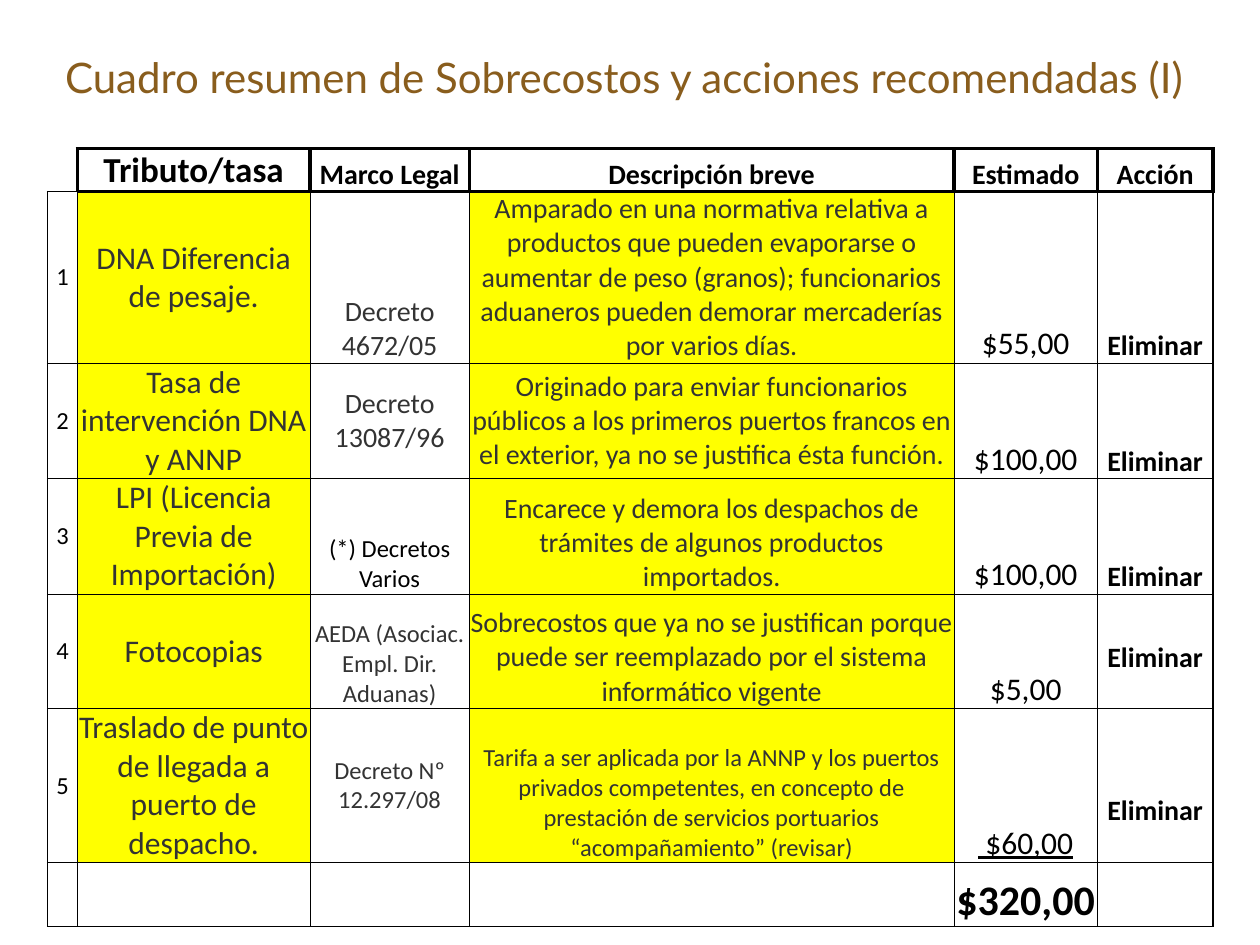
from dataclasses import dataclass

from lxml.etree import SubElement
from pptx import Presentation
from pptx.dml.color import RGBColor as Rgb
from pptx.enum.text import MSO_ANCHOR as Anchor, MSO_AUTO_SIZE as AutoSize, PP_ALIGN as Align
from pptx.oxml.ns import qn
from pptx.util import Pt

TITLE = "Cuadro resumen de Sobrecostos y acciones recomendadas (I)"
HEADERS = ["", "Tributo/tasa", "Marco Legal", "Descripción breve", "Estimado", "Acción"]
TAXES = [
    ("1", "DNA Diferencia de pesaje.", "Decreto 4672/05",
     "Amparado en una normativa relativa a productos que pueden evaporarse o aumentar de peso "
     "(granos); funcionarios aduaneros pueden demorar mercaderías por varios días.",
     "$55,00", "Eliminar"),
    ("2", "Tasa de intervención DNA y ANNP", "Decreto 13087/96",
     "Originado para enviar funcionarios públicos a los primeros puertos francos en el exterior, "
     "ya no se justifica ésta función.",
     "$100,00", "Eliminar"),
    ("3", "LPI (Licencia Previa de Importación)", "(*) Decretos Varios",
     "Encarece y demora los despachos de trámites de algunos productos importados.",
     "$100,00", "Eliminar"),
    ("4", "Fotocopias", "AEDA (Asociac. Empl. Dir. Aduanas)",
     "Sobrecostos que ya no se justifican porque puede ser reemplazado por el sistema "
     "informático vigente",
     "$5,00", "Eliminar"),
    ("5", "Traslado de punto de llegada a puerto de despacho.", "Decreto Nº 12.297/08",
     "Tarifa a ser aplicada por la ANNP y los puertos privados competentes, en concepto de "
     "prestación de servicios portuarios “acompañamiento” (revisar)",
     " $60,00", "Eliminar"),
]
TOTALS = ["", "", "", "", "$320,00", ""]
ROWS = [HEADERS, *TAXES, TOTALS]

COLUMN_WIDTHS = [17, 133, 91, 277, 82, 66]
ROW_HEIGHTS = [24.5, 98, 66, 66, 65.5, 87, 36.5]
TABLE_LEFT, TABLE_TOP = 27.2, 85
NUMBER, TAX, LAW, DESCRIPTION, AMOUNT, ACTION = range(6)
TOTAL_ROW = len(ROWS) - 1


@dataclass(frozen=True)
class Theme:
    title_font: str = "Lato"
    body_font: str = "Calibri"
    title: str = "895D1D"
    ink: str = "000000"
    soft_ink: str = "333333"
    highlight: str = "FFFF00"
    title_size: int = 24
    total_size: int = 24
    lead_size: int = 20
    large: int = 18
    medium: int = 16
    small: int = 14
    heavy_line: float = 2.25
    edge_line: float = 1
    thin_line: float = 0.5


THEME = Theme()
COLUMN_SIZES = [THEME.small, THEME.large, THEME.medium, THEME.medium, THEME.large, THEME.medium]
SMALL_CELLS = {(3, LAW), (4, LAW), (5, LAW), (5, DESCRIPTION)}
MIDDLE_CELLS = {(2, LAW), (5, LAW), (1, DESCRIPTION), (2, DESCRIPTION)}
RAISED_CELLS = {(4, ACTION), (5, ACTION)}
RAISE = 19.5


def text_size(row, column):
    if row == 0:
        return THEME.lead_size if column == TAX else THEME.medium
    if row == TOTAL_ROW:
        return THEME.total_size if column == AMOUNT else THEME.small
    return THEME.small if (row, column) in SMALL_CELLS else COLUMN_SIZES[column]


def border_widths(row, column):
    """Return the left, right, top and bottom line widths, 0 for no line."""
    heavy, edge, thin = THEME.heavy_line, THEME.edge_line, THEME.thin_line
    if row == 0:
        return (0, heavy, 0, edge) if column == NUMBER else (heavy,) * 4
    top = thin if row > 1 else edge if column == NUMBER else heavy
    return (edge if column == NUMBER else thin, edge if column == ACTION else thin,
            top, edge if row == TOTAL_ROW else thin)


def draw_borders(cell, widths):
    properties = cell._tc.get_or_add_tcPr()
    for index, (side, width) in enumerate(zip("LRTB", widths)):
        line = SubElement(properties, qn(f"a:ln{side}"), w=str(int(Pt(width))))
        properties.insert(index, line)
        if width:
            fill = SubElement(line, qn("a:solidFill"))
            SubElement(fill, qn("a:srgbClr"), val=THEME.ink)
        else:
            SubElement(line, qn("a:noFill"))


def format_cell(cell, text, row, column):
    is_tax = 0 < row < TOTAL_ROW
    cell.margin_left = cell.margin_right = cell.margin_top = 0
    cell.margin_bottom = Pt(RAISE) if (row, column) in RAISED_CELLS else 0
    is_middle = is_tax and column in (NUMBER, TAX) or (row, column) in MIDDLE_CELLS
    cell.vertical_anchor = Anchor.MIDDLE if is_middle else Anchor.BOTTOM

    cell.text = text
    para = cell.text_frame.paragraphs[0]
    para.alignment = Align.CENTER
    font = para.font
    font.name = THEME.body_font
    font.size = Pt(text_size(row, column))
    font.bold = not is_tax or column == ACTION
    font.underline = (row, column) == (TOTAL_ROW - 1, AMOUNT)
    is_soft = is_tax and column in (TAX, LAW, DESCRIPTION) and (row, column) != (3, LAW)
    font.color.rgb = Rgb.from_string(THEME.soft_ink if is_soft else THEME.ink)

    if is_tax and column in (TAX, DESCRIPTION):
        cell.fill.solid()
        cell.fill.fore_color.rgb = Rgb.from_string(THEME.highlight)
    else:
        cell.fill.background()
    draw_borders(cell, border_widths(row, column))


def add_title(page):
    title = page.shapes.title
    title.left, title.top, title.width, title.height = Pt(22), Pt(14.5), Pt(669), Pt(59)
    frame = title.text_frame
    frame.text = TITLE
    frame.auto_size = AutoSize.NONE
    frame.vertical_anchor = Anchor.MIDDLE
    para = frame.paragraphs[0]
    para.alignment = Align.CENTER
    para.font.name = THEME.title_font
    para.font.size = Pt(THEME.title_size)
    para.font.color.rgb = Rgb.from_string(THEME.title)


def add_tax_table(page):
    table = page.shapes.add_table(
        len(ROWS), len(HEADERS), Pt(TABLE_LEFT), Pt(TABLE_TOP),
        Pt(sum(COLUMN_WIDTHS)), Pt(sum(ROW_HEIGHTS))).table
    table.first_row = table.horz_banding = False
    for column, width in zip(table.columns, COLUMN_WIDTHS):
        column.width = Pt(width)
    for row, height in zip(table.rows, ROW_HEIGHTS):
        row.height = Pt(height)
    for row, texts in enumerate(ROWS):
        for column, text in enumerate(texts):
            format_cell(table.cell(row, column), text, row, column)


def main():
    deck = Presentation()
    deck.slide_width, deck.slide_height = Pt(720), Pt(540)
    page = deck.slides.add_slide(deck.slide_layouts[5])
    add_title(page)
    add_tax_table(page)
    deck.save("out.pptx")


if __name__ == "__main__":
    main()
